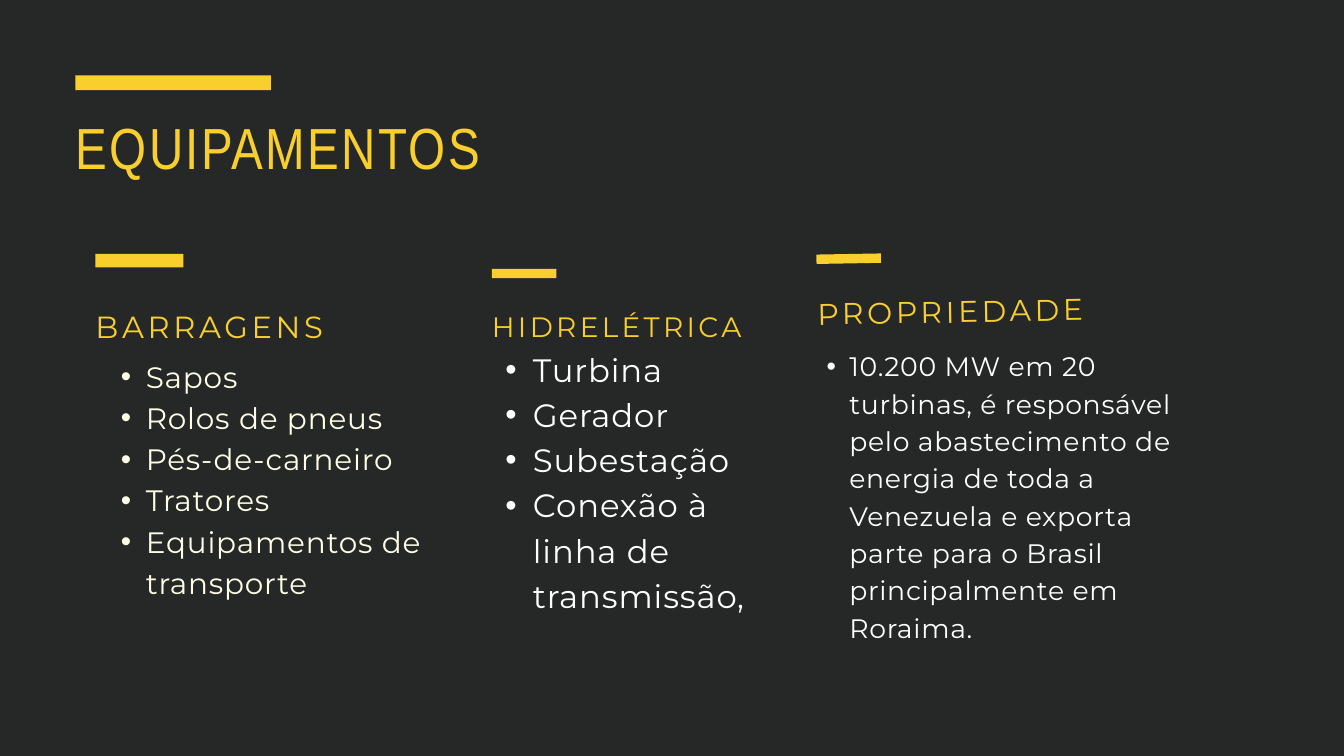
from lxml.etree import SubElement
from pptx import Presentation
from pptx.dml.color import RGBColor
from pptx.enum.shapes import MSO_SHAPE
from pptx.oxml.ns import qn
from pptx.util import Inches, Pt

COLORS = {"ground": "252827", "yellow": "F8CF2C", "cream": "FFFEE6", "white": "FFFFFF"}

# Text formats: size, line pitch and letter spacing in points
TITLE = dict(name="Arial Narrow", size=62.1, pitch=68.3, spacing=2.5, color="yellow")
HEADING = dict(name="Montserrat", color="yellow")
BODY = dict(name="Montserrat", color="white")

# Each column: bar box, then heading and list boxes offset from the bar's corner
COLUMNS = [
    dict(
        bar=(1.42, 3.78, 1.31, 0.2), angle=0,
        heading="BARRAGENS", heading_box=(0, 0.62, 5.98, 0.65),
        heading_style=HEADING | dict(size=32.7, pitch=52.3, spacing=3.9),
        items=["Sapos", "Rolos de pneus", "Pés-de-carneiro", "Tratores",
               "Equipamentos de transporte"],
        list_box=(0, 1.47, 5.86, 3.59), indent=(0.75, 0.37),
        list_style=BODY | dict(size=31.6, pitch=44.2, spacing=0.9, color="cream"),
    ),
    dict(
        bar=(7.32, 4, 0.96, 0.14), angle=0,
        heading="HIDRELÉTRICA", heading_box=(0, 0.44, 4.39, 0.58),
        heading_style=HEADING | dict(size=30, pitch=48, spacing=3.6),
        items=["Turbina", "Gerador", "Subestação", "Conexão à linha de transmissão,"],
        list_box=(-0.21, 1.11, 4.81, 3.95), indent=(0.82, 0.41),
        list_style=BODY | dict(size=34.6, pitch=48.5, spacing=1),
    ),
    dict(
        bar=(12.15, 3.78, 0.96, 0.14), angle=359,
        heading="PROPRIEDADE", heading_box=(0.01, 0.4, 4.39, 0.63),
        heading_style=HEADING | dict(size=32, pitch=51.2, spacing=3.8),
        items=["10.200 MW em 20 turbinas, é responsável pelo abastecimento de energia "
               "de toda a Venezuela e exporta parte para o Brasil principalmente em Roraima."],
        list_box=(-0.18, 1.35, 5.5, 4.99), indent=(0.67, 0.34),
        list_style=BODY | dict(size=28.6, pitch=40, spacing=0.8),
    ),
]


def rgb(color):
    return RGBColor.from_string(COLORS[color])


def add_bar(page, bounds, angle=0):
    bar = page.shapes.add_shape(MSO_SHAPE.RECTANGLE, *map(Inches, bounds))
    bar.shadow.inherit = False
    bar.fill.solid()
    bar.fill.fore_color.rgb = rgb("yellow")
    bar.line.fill.background()
    bar.rotation = angle


def add_bullet(para, margin, hanging):
    properties = para._p.get_or_add_pPr()
    properties.set("marL", str(Inches(margin)))
    properties.set("indent", str(-Inches(hanging)))
    SubElement(properties, qn("a:buFont"), typeface="Arial")
    SubElement(properties, qn("a:buChar"), char="•")


def add_text(page, bounds, lines, style, angle=0, indent=None):
    box = page.shapes.add_textbox(*map(Inches, bounds))
    box.rotation = angle
    frame = box.text_frame
    frame.word_wrap = True
    for side in ("left", "top", "right", "bottom"):
        setattr(frame, f"margin_{side}", 0)
    for index, line in enumerate(lines):
        para = frame.add_paragraph() if index else frame.paragraphs[0]
        if indent:
            para.level = 1
            add_bullet(para, *indent)
        para.line_spacing = Pt(style["pitch"])
        span = para.add_run()
        span.text = line
        values = {"name": style["name"], "size": Pt(style["size"])}
        for attribute, value in values.items():
            setattr(span.font, attribute, value)
        span.font.color.rgb = rgb(style["color"])
        span._r.get_or_add_rPr().set("spc", str(round(style["spacing"] * 100)))


def add_title(page, left, top):
    add_bar(page, (left, top, 2.91, 0.22))
    add_text(page, (left + 0.01, top + 0.63, 9.06, 1.94), ["EQUIPAMENTOS"], TITLE)


def add_column(page, column):
    left, top = column["bar"][:2]

    def place(bounds):
        x, y, width, height = bounds
        return left + x, top + y, width, height

    add_bar(page, column["bar"], column["angle"])
    add_text(page, place(column["heading_box"]), [column["heading"]],
             column["heading_style"], angle=column["angle"])
    add_text(page, place(column["list_box"]), column["items"],
             column["list_style"], indent=column["indent"])


def main():
    deck = Presentation()
    deck.slide_width, deck.slide_height = Inches(20), Inches(11.25)
    page = deck.slides.add_slide(deck.slide_layouts[6])
    page.background.fill.solid()
    page.background.fill.fore_color.rgb = rgb("ground")

    add_title(page, 1.12, 1.12)
    for column in COLUMNS:
        add_column(page, column)

    deck.save("out.pptx")


if __name__ == "__main__":
    main()
